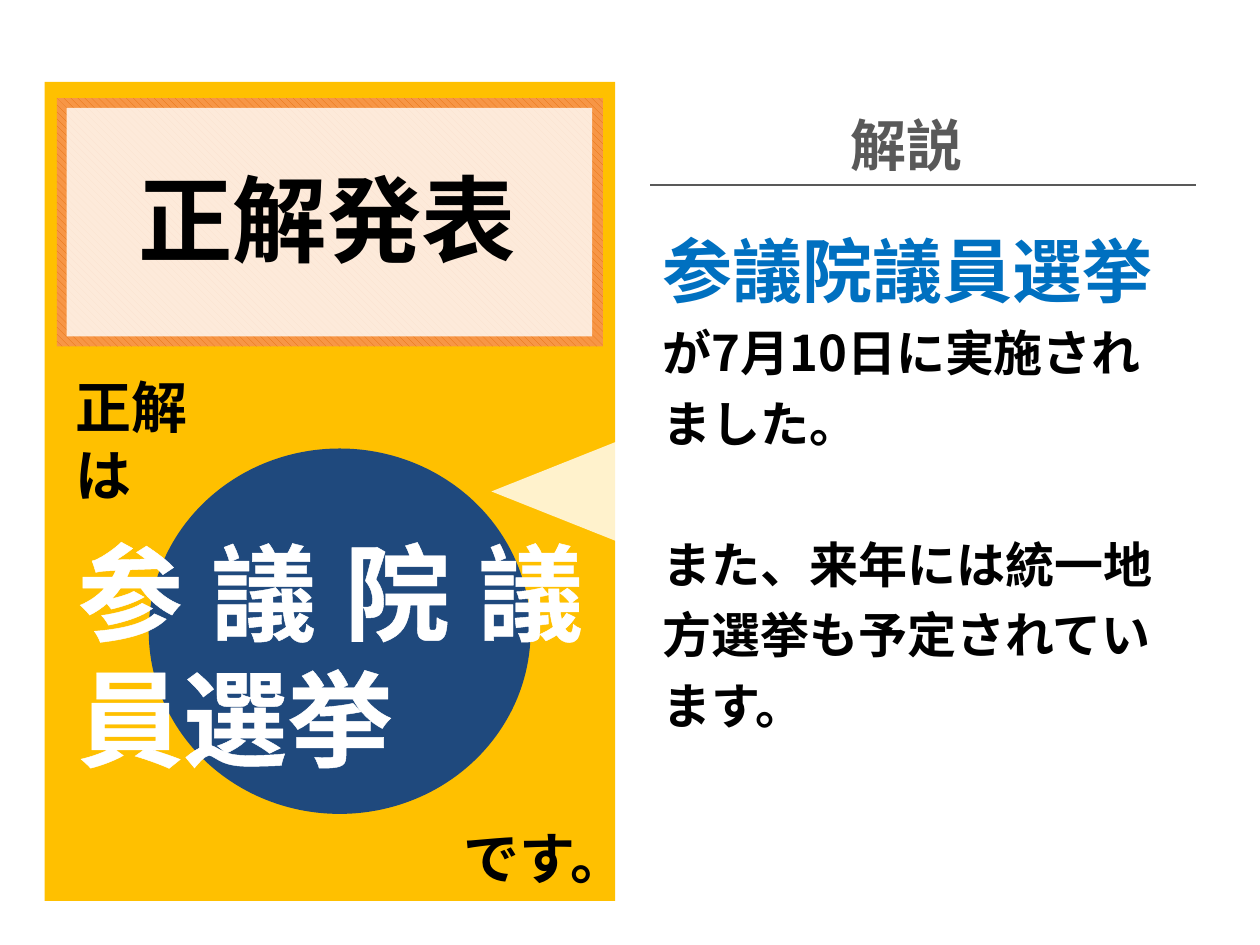
from lxml.etree import SubElement
from pptx import Presentation
from pptx.dml.color import RGBColor
from pptx.enum.dml import MSO_PATTERN
from pptx.enum.shapes import MSO_CONNECTOR, MSO_SHAPE
from pptx.enum.text import MSO_ANCHOR, MSO_AUTO_SIZE, PP_ALIGN
from pptx.oxml.ns import qn
from pptx.util import Pt

FACE = "Noto Sans CJK JP"
COLORS = {
    "white": "FFFFFF", "black": "000000", "gray": "595959", "gold": "FFC000",
    "blue": "0070C0", "navy": "1F497D", "orange": "F79646", "rust": "E46C0A",
}
# kind, box (left, top, width, height), color, opacity in percent, rotation
PANELS = [
    ("RECTANGLE", (13, 13.7, 694.8, 513.4), "white", 20, 0),
    ("RECTANGLE", (25.5, 46.8, 326, 468), "gold", 100, 0),
    ("RECTANGLE", (32.5, 56, 312, 142), "orange", 100, 0),
    ("RECTANGLE", (38, 61.7, 300.4, 130.5), "white", 80, 0),
    ("ROUNDED_RECTANGLE", (364.3, 46.8, 330.5, 468), "white", 80, 0),
    ("ISOSCELES_TRIANGLE", (290.2, 234.7, 73.4, 92.2), "white", 80, 270),
    ("OVAL", (85, 256.3, 218.2, 208.8), "navy", 100, 0),
]
HATCHED, ROUNDED = 2, 4
RULE = (371.5, 105.8, 683.5, 105.8)
TITLE = ((70.6, 88.6, 232.6, 72.7), [[("正解発表", 54, "black")]])
BODY = ((371.5, 116.6, 312, 269.3), [
    [("参議院議員選挙", 40, "blue"), ("が7月10日に実施されました。", 28, "black")],
    [("また、来年には統一地方選挙も予定されています。", 28, "black")],
])
ANSWER = ((37.4, 298, 303, 152.6), [[("参議院議員選挙", 60, "white")]])
LABELS = [
    ((36, 209.5, 108, 46), [[("正解は", 32, "black")]]),
    ((257.8, 467.3, 92.2, 46), [[("です。", 32, "black")]]),
    ((478.8, 59.8, 79.2, 46), [[("解説", 32, "gray")]]),
]
FRAME = {"word_wrap": True, "auto_size": MSO_AUTO_SIZE.SHAPE_TO_FIT_TEXT,
         "vertical_anchor": MSO_ANCHOR.TOP}
PLAIN = {"alignment": PP_ALIGN.LEFT, "line_spacing": 1.0,
         "space_before": Pt(0), "space_after": Pt(0)}


def rgb(name):
    return RGBColor.from_string(COLORS[name])


def apply(item, values):
    for key, value in values.items():
        setattr(item, key, value)


def place(shape, box):
    apply(shape, dict(zip(("left", "top", "width", "height"), map(Pt, box))))


def write(shape, paras, **style):
    """Fill a shape with paragraphs, each a list of (text, size, color)."""
    frame = shape.text_frame
    apply(frame, FRAME)
    for i, runs in enumerate(paras):
        para = frame.add_paragraph() if i else frame.paragraphs[0]
        apply(para, {**PLAIN, **style})
        for text, size, color in runs:
            run = para.add_run()
            run.text = text
            apply(run.font, {"size": Pt(size), "bold": True, "name": FACE})
            run.font.color.rgb = rgb(color)
            SubElement(run.font._element, qn("a:ea"), typeface=FACE)


def panel(slide, kind, box, color, alpha, turn):
    shape = slide.shapes.add_shape(MSO_SHAPE[kind], *map(Pt, box))
    shape.shadow.inherit = False
    shape.rotation = turn
    shape.line.fill.background()
    shape.fill.solid()
    shape.fill.fore_color.rgb = rgb(color)
    if alpha < 100:
        tint = shape._element.spPr.find(qn("a:solidFill"))[0]
        SubElement(tint, qn("a:alpha"), val=str(alpha * 1000))
    return shape


def textbox(slide, box, paras, **style):
    shape = slide.shapes.add_textbox(*map(Pt, box))
    write(shape, paras, **style)
    return shape


def main():
    deck = Presentation()
    deck.slide_width, deck.slide_height = Pt(720), Pt(540)
    slide = deck.slides.add_slide(deck.slide_layouts[1])
    title, body = slide.placeholders

    panels = [panel(slide, *row) for row in PANELS]
    panels[0].line.color.rgb = rgb("white")
    panels[0].line.width = Pt(0.5)
    hatch = panels[HATCHED].fill
    hatch.patterned()
    hatch.pattern = MSO_PATTERN.WIDE_DOWNWARD_DIAGONAL
    hatch.fore_color.rgb, hatch.back_color.rgb = rgb("rust"), rgb("orange")
    panels[ROUNDED].adjustments[0] = 0.06

    rule = slide.shapes.add_connector(MSO_CONNECTOR.STRAIGHT, *map(Pt, RULE))
    rule.line.color.rgb = rgb("gray")
    rule.line.width = Pt(0.75)
    SubElement(rule._element.spPr, qn("a:effectLst"))

    for holder, (box, paras), style in (
        (title, TITLE, {"alignment": PP_ALIGN.CENTER}),
        (body, BODY, {"line_spacing": 1.2}),
    ):
        place(holder, box)
        write(holder, paras, **style)
        slide.shapes._spTree.append(holder._element)  # bring to front
    for para in body.text_frame.paragraphs:
        props = para._p.get_or_add_pPr()
        props.set("marL", "0")
        props.set("indent", "0")
        SubElement(props, qn("a:buNone"))
    body.text_frame.paragraphs[1].space_before = Pt(40)

    for box, paras in LABELS:
        textbox(slide, box, paras)
    answer = textbox(slide, *ANSWER, alignment=PP_ALIGN.JUSTIFY)
    font = answer.text_frame.paragraphs[0].runs[0].font
    edge = SubElement(font._element, qn("a:ln"), w=str(Pt(1.5)))
    font._element.insert(0, edge)
    fill = SubElement(edge, qn("a:solidFill"))
    SubElement(fill, qn("a:srgbClr"), val=COLORS["white"])

    deck.save("out.pptx")


if __name__ == "__main__":
    main()
